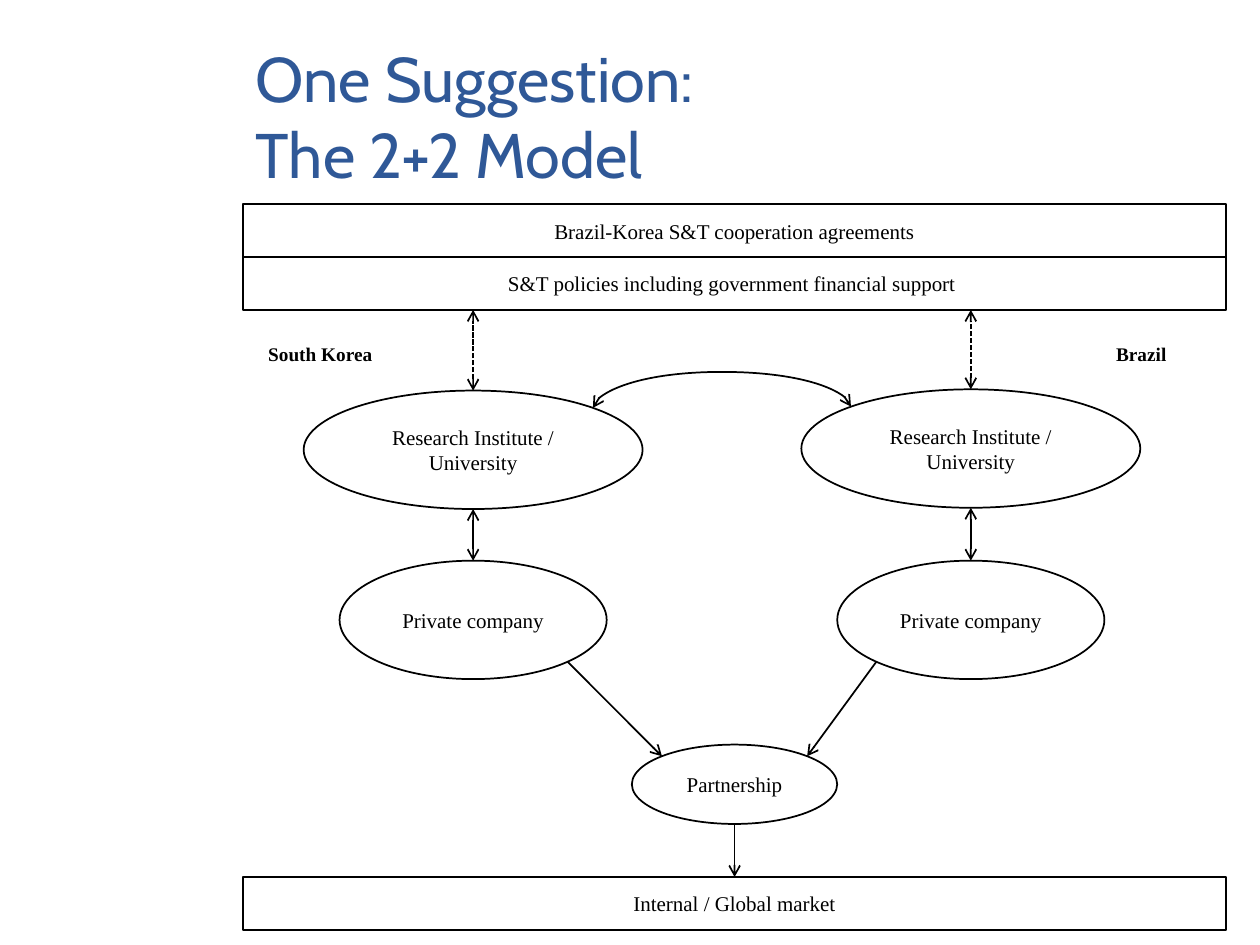
import math

import lxml.etree
import pptx
import pptx.dml.color
import pptx.enum.dml
import pptx.enum.shapes
import pptx.enum.text
import pptx.oxml.ns
import pptx.util
from pptx.util import Inches

BLACK = "000000"
WHITE = "FFFFFF"
TITLE_BLUE = "2F5897"
SHAPES = pptx.enum.shapes.MSO_SHAPE
CONNECTORS = pptx.enum.shapes.MSO_CONNECTOR
ALIGN = pptx.enum.text.PP_ALIGN
ANCHOR = pptx.enum.text.MSO_ANCHOR
TOP = 0


def color(hex_value):
    return pptx.dml.color.RGBColor.from_string(hex_value)


def write(shape, text, size=12, font="Times New Roman", fill=BLACK, bold=False,
          align=ALIGN.CENTER, anchor=ANCHOR.MIDDLE):
    frame = shape.text_frame
    frame.word_wrap = True
    frame.auto_size = pptx.enum.text.MSO_AUTO_SIZE.NONE
    frame.vertical_anchor = anchor
    frame.text = text
    paragraph = frame.paragraphs[0]
    paragraph.alignment = align
    for run in paragraph.runs:
        run.font.size = pptx.util.Pt(size)
        run.font.name = font
        run.font.bold = bold
        run.font.color.rgb = color(fill)


def add_node(slide, kind, box, text):
    node = slide.shapes.add_shape(kind, *box)
    node.shadow.inherit = False
    node.fill.solid()
    node.fill.fore_color.rgb = color(WHITE)
    node.line.color.rgb = color(BLACK)
    node.line.width = pptx.util.Pt(1)
    write(node, text)
    return node


def add_label(slide, box, text):
    label = slide.shapes.add_textbox(*box)
    write(label, text, size=11, bold=True, align=ALIGN.LEFT, anchor=ANCHOR.TOP)


def add_arrow(slide, start, end, both=False, dashed=False, kind=CONNECTORS.STRAIGHT):
    arrow = slide.shapes.add_connector(kind, *start, *end)
    arrow.line.color.rgb = color(BLACK)
    arrow.line.width = pptx.util.Pt(1)
    if dashed:
        arrow.line.dash_style = pptx.enum.dml.MSO_LINE.SQUARE_DOT
    line = arrow.line._get_or_add_ln()
    for tag in ("a:headEnd", "a:tailEnd") if both else ("a:tailEnd",):
        lxml.etree.SubElement(line, pptx.oxml.ns.qn(tag), type="arrow")
    lxml.etree.SubElement(arrow._element.spPr, pptx.oxml.ns.qn("a:effectLst"))
    return arrow


def center_x(shape):
    return shape.left + shape.width // 2


def bottom(shape):
    return shape.top + shape.height


def rim(ellipse, side_x, side_y):
    reach = math.sqrt(0.5) / 2
    return (int(center_x(ellipse) + side_x * reach * ellipse.width),
            int(ellipse.top + ellipse.height / 2 + side_y * reach * ellipse.height))


def place_title(slide, left, top, width, height):
    title = slide.shapes.title
    title.left, title.top, title.width, title.height = left, top, width, height
    write(title, "One Suggestion: \vThe 2+2 Model", size=36, font="Cabin",
          fill=TITLE_BLUE, align=ALIGN.LEFT)


def add_policies(slide, left, top, width, height):
    texts = ("Brazil-Korea S&T cooperation agreements",
             "S&T policies including government financial support ")
    row = height // len(texts)
    for index, text in enumerate(texts):
        add_node(slide, SHAPES.RECTANGLE, (left, top + index * row, width, row), text)


def add_country(slide, left, top, width, height, policies_bottom):
    oval_height = Inches(0.94)
    company_width = Inches(2.12)
    institute = add_node(slide, SHAPES.OVAL, (left, top, width, oval_height),
                         "Research Institute / University")
    company = add_node(slide, SHAPES.OVAL,
                       (left + (width - company_width) // 2, top + height - oval_height,
                        company_width, oval_height), "Private company")
    middle = center_x(institute)
    for oval, target, dashed in ((company, bottom(institute), False),
                                 (institute, policies_bottom, True)):
        arrow = add_arrow(slide, (middle, oval.top), (middle, target), True, dashed)
        arrow.begin_connect(oval, TOP)
    return institute, company


def add_exchange(slide, korea, brazil, rise):
    start, end = rim(korea, 1, -1), rim(brazil, -1, -1)
    middle_x, middle_y = (start[0] + end[0]) // 2, (start[1] + end[1]) // 2
    half_span = (end[0] - start[0]) // 2
    thickness = Inches(0.01)
    curve = add_arrow(slide, (middle_x + thickness // 2, middle_y + half_span),
                      (middle_x - thickness // 2, middle_y - half_span),
                      both=True, kind=CONNECTORS.CURVE)
    properties = curve._element.spPr
    properties.find(pptx.oxml.ns.qn("a:xfrm")).set("rot", str(90 * 60000))
    geometry = properties.find(pptx.oxml.ns.qn("a:prstGeom"))
    guides = geometry.find(pptx.oxml.ns.qn("a:avLst"))
    if guides is None:
        guides = lxml.etree.SubElement(geometry, pptx.oxml.ns.qn("a:avLst"))
    lxml.etree.SubElement(guides, pptx.oxml.ns.qn("a:gd"), name="adj1",
                          fmla=f"val {round(rise / thickness * 100000)}")


def add_outcome(slide, left, top, width, height, korea, brazil):
    bar_height = Inches(0.42)
    oval_width = Inches(1.63)
    market = add_node(slide, SHAPES.RECTANGLE,
                      (left, top + height - bar_height, width, bar_height),
                      "Internal / Global market")
    partnership = add_node(slide, SHAPES.OVAL,
                           (left + (width - oval_width) // 2, top, oval_width, Inches(0.63)),
                           "Partnership")
    for company, side in ((korea, -1), (brazil, 1)):
        add_arrow(slide, rim(company, -side, 1), rim(partnership, side, -1))
    result = add_arrow(slide, (center_x(partnership), bottom(partnership)),
                       (center_x(market), market.top))
    result.end_connect(market, TOP)


def main():
    presentation = pptx.Presentation()
    presentation.slide_width, presentation.slide_height = Inches(10), Inches(7.5)
    slide = presentation.slides.add_slide(presentation.slide_layouts[5])
    left, width = Inches(1.93), Inches(7.8)
    policies_top, policies_height = Inches(1.62), Inches(0.84)
    policies_bottom = policies_top + policies_height

    place_title(slide, left, Inches(0.05), Inches(5.64), Inches(1.73))
    add_policies(slide, left, policies_top, width, policies_height)
    korea_institute, korea_company = add_country(
        slide, Inches(2.41), Inches(3.1), Inches(2.69), Inches(2.29), policies_bottom)
    brazil_institute, brazil_company = add_country(
        slide, Inches(6.36), Inches(3.09), Inches(2.69), Inches(2.3), policies_bottom)
    add_outcome(slide, left, Inches(5.91), width, Inches(1.47), korea_company, brazil_company)
    add_exchange(slide, korea_institute, brazil_institute, Inches(0.29))
    add_label(slide, (Inches(8.76), Inches(2.67), Inches(0.67), Inches(0.36)), "Brazil")
    add_label(slide, (Inches(2.03), Inches(2.67), Inches(1.35), Inches(0.36)), "South Korea")
    presentation.save("out.pptx")


if __name__ == "__main__":
    main()
